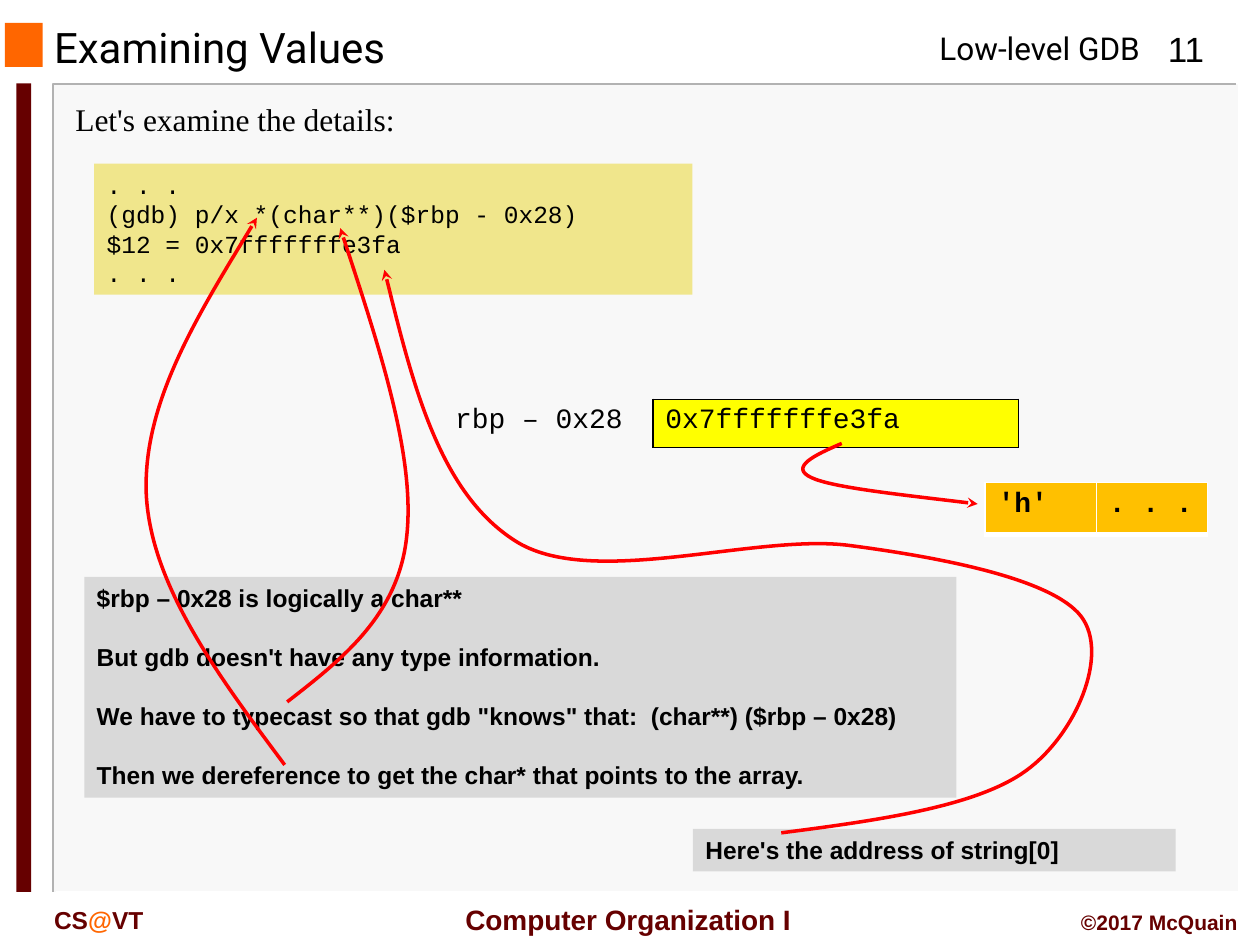
"""Build the slide that explains a typecast and dereference in gdb."""
import pptx
import pptx.dml.color
import pptx.enum.shapes
import pptx.enum.text
import pptx.oxml.ns
import pptx.util
from lxml import etree

Cm, Pt = pptx.util.Cm, pptx.util.Pt
ALIGN = pptx.enum.text.PP_ALIGN
ANCHOR = pptx.enum.text.MSO_ANCHOR
BLACK, WHITE, MAROON, ORANGE, RED = "000000", "FFFFFF", "660000", "FF6600", "FF0000"
KHAKI, GREY, YELLOW, GOLD = "F0E68C", "D9D9D9", "FFFF00", "FFC000"
NO_STYLE = "{2D5ABB26-0587-4C30-8999-92F81FD0307C}"
LINE_PT = 16.8

BLOCKS = [
    ((1.09, 1.7, 23.88, 16.28), "F8F8F8"),
    ((0.1, 0.46, 0.76, 0.89), ORANGE),
    ((0.33, 1.68, 0.3, 16.3), MAROON),
]
EDGES = [
    ([(24.92, 1.7), (1.07, 1.7), (1.07, 17.98)], "B2B2B2"),
    ([(24.97, 1.7), (24.97, 17.98), (1.12, 17.98)], WHITE),
]

ROBOTO = {"name": "Roboto", "size": Pt(18)}
FOOTER = {"name": "Arial", "size": Pt(14), "bold": True}
LABELS = [
    ((18.69, 0.46, 4.8, 1.02), [("Low-level GDB", BLACK)], ROBOTO, {}, {}),
    ((8.92, 18.06, 7.49, 0.94), [("Computer Organization I", MAROON)],
     {**FOOTER, "size": Pt(16)}, {"alignment": ALIGN.CENTER},
     {"vertical_anchor": ANCHOR.MIDDLE}),
    ((23.06, 0.43, 1.7, 1.09), [("11", BLACK)],
     {"name": "Arial", "size": Pt(20)}, {"alignment": ALIGN.CENTER}, {}),
    ((0.84, 18.11, 3.81, 0.84), [("CS", MAROON), ("@", ORANGE), ("VT", MAROON)],
     FOOTER, {}, {}),
    ((17.78, 18.21, 7.42, 0.76), [("©2017 McQuain", MAROON)],
     {**FOOTER, "size": Pt(12)}, {"alignment": ALIGN.RIGHT}, {}),
    ((0.84, 0.46, 16.08, 0.97), [("Examining Values", BLACK)],
     {**ROBOTO, "size": Pt(24)}, {}, {"vertical_anchor": ANCHOR.MIDDLE}),
    ((1.27, 1.9, 23.5, 1.02), [("Let's examine the details:", BLACK)],
     {"name": "Times New Roman", "size": Pt(18)}, {}, {}),
]

MEMORY = {"name": "Courier New", "size": Pt(16)}
THIN_BLACK = {side: (BLACK, 1) for side in "LRTB"}
THIN_WHITE = {**{side: (WHITE, 1) for side in "LRT"}, "B": (WHITE, 3)}
TABLES = [
    ((8.92, 8.05), 0.97, MEMORY, [
        ("rbp – 0x28", 4.24, None, {"R": (BLACK, 1)}),
        ("0x7fffffffe3fa", 7.37, YELLOW, THIN_BLACK)]),
    ((19.86, 9.73), 1.04, {**MEMORY, "bold": True}, [
        ("'h'", 2.24, GOLD, THIN_WHITE),
        (". . .", 2.24, GOLD, THIN_WHITE)]),
]

BOXES = [
    ((1.9, 3.3, 12.06, 2.64), KHAKI, {"name": "Courier New", "size": Pt(14)}, 0, [
        ". . .",
        "(gdb) p/x *(char**)($rbp - 0x28)",
        "$12 = 0x7fffffffe3fa",
        ". . ."]),
    ((13.97, 16.71, 9.73, 0.86), GREY, FOOTER, 0, [
        "Here's the address of string[0]"]),
    ((1.7, 11.63, 17.58, 4.45), GREY, FOOTER, LINE_PT, [
        "$rbp – 0x28 is logically a char**",
        "But gdb doesn't have any type information.",
        "We have to typecast so that gdb \"knows\" that:  (char**) ($rbp – 0x28)",
        "Then we dereference to get the char* that points to the array."]),
]

ARROWS = [
    [(16.97, 8.94), (16.43, 9.17), (15.9, 9.42), (16.36, 9.63),
     (16.79, 9.83), (18.24, 9.98), (19.71, 10.16)],
    [(5.79, 14.15), (6.91, 13.28), (8.03, 12.4), (8.2, 10.82),
     (8.38, 9.22), (7.62, 6.91), (6.86, 4.6)],
    [(5.74, 15.42), (4.39, 13.61), (3.05, 11.81), (2.95, 9.98),
     (2.87, 8.13), (4.04, 6.27), (5.18, 4.39)],
    [(15.75, 16.79), (17.7, 16.54), (19.69, 16.26), (20.68, 15.54),
     (21.69, 14.81), (22.38, 13.18), (21.79, 12.42), (21.21, 11.68),
     (19.05, 11.25), (17.15, 11), (15.27, 10.74), (12.04, 11.86),
     (10.46, 10.95), (8.89, 10.01), (8.31, 7.72), (7.75, 5.44)],
]


def rgb(color):
    return pptx.dml.color.RGBColor.from_string(color)


def assign(obj, values):
    for name, value in values.items():
        setattr(obj, name, value)


def paint(fill, color):
    if color:
        fill.solid()
        fill.fore_color.rgb = rgb(color)
    else:
        fill.background()


def child(parent, tag, **attrs):
    return etree.SubElement(parent, pptx.oxml.ns.qn(tag), attrs)


def add_run(p, text, color, font):
    r = p.add_run()
    r.text = text
    assign(r.font, font)
    r.font.color.rgb = rgb(color)


def add_block(s, at, color):
    sp = s.shapes.add_shape(pptx.enum.shapes.MSO_SHAPE.RECTANGLE, *map(Cm, at))
    sp.shadow.inherit = False
    paint(sp.fill, color)
    sp.line.fill.background()
    return sp


def add_label(s, at, runs, font, para, frame):
    tf = s.shapes.add_textbox(*map(Cm, at)).text_frame
    assign(tf, {"word_wrap": True, **frame})
    p = tf.paragraphs[0]
    assign(p, para)
    for text, color in runs:
        add_run(p, text, color, font)


def add_box(s, at, color, font, gap, lines):
    tf = add_block(s, at, color).text_frame
    assign(tf, {"word_wrap": True, "vertical_anchor": ANCHOR.TOP})
    for i, line in enumerate(lines):
        p = tf.add_paragraph() if i else tf.paragraphs[0]
        assign(p, {"alignment": ALIGN.LEFT, "line_spacing": Pt(LINE_PT),
                   "space_before": Pt(gap if i else 0)})
        add_run(p, line, BLACK, font)


def add_table(s, at, height, font, cells):
    width = sum(cell[1] for cell in cells)
    sp = s.shapes.add_table(1, len(cells), *map(Cm, (*at, width, height)))
    table = sp.table
    assign(table, {"first_row": False, "horz_banding": False})
    sp._element.xpath(".//a:tableStyleId")[0].text = NO_STYLE
    table.rows[0].height = Cm(height)
    for i, (text, col_width, color, borders) in enumerate(cells):
        table.columns[i].width = Cm(col_width)
        cell = table.cell(0, i)
        add_run(cell.text_frame.paragraphs[0], text, BLACK, font)
        tc_pr = cell._tc.get_or_add_tcPr()
        for side, (line_color, points) in borders.items():
            ln = child(tc_pr, f"a:ln{side}", w=str(Pt(points)))
            child(child(ln, "a:solidFill"), "a:srgbClr", val=line_color)
        paint(cell.fill, color)


def add_outline(s, points, color, weight):
    pts = [(Cm(x), Cm(y)) for x, y in points]
    builder = s.shapes.build_freeform(*pts[0])
    builder.add_line_segments(pts[1:], close=False)
    sp = builder.convert_to_shape()
    sp.shadow.inherit = False
    sp.fill.background()
    assign(sp.line, {"width": Pt(weight)})
    sp.line.color.rgb = rgb(color)
    return sp


def add_arrow(s, points):
    sp = add_outline(s, points, RED, 2)
    steps = sp._element.xpath(".//a:lnTo")
    outline = steps[0].getparent()
    for i in range(0, len(steps), 3):
        curve = child(outline, "a:cubicBezTo")
        for step in steps[i:i + 3]:
            curve.append(step[0])
            outline.remove(step)
    child(sp._element.xpath(".//a:ln")[0], "a:tailEnd", type="stealth")


def main():
    prs = pptx.Presentation()
    assign(prs, {"slide_width": Cm(25.4), "slide_height": Cm(19.05)})
    s = prs.slides.add_slide(prs.slide_layouts[6])
    for block in BLOCKS:
        add_block(s, *block)
    for points, color in EDGES:
        add_outline(s, points, color, 1)
    for add, items in ((add_label, LABELS), (add_table, TABLES), (add_box, BOXES)):
        for item in items:
            add(s, *item)
    for points in ARROWS:
        add_arrow(s, points)
    prs.save("out.pptx")


if __name__ == "__main__":
    main()
